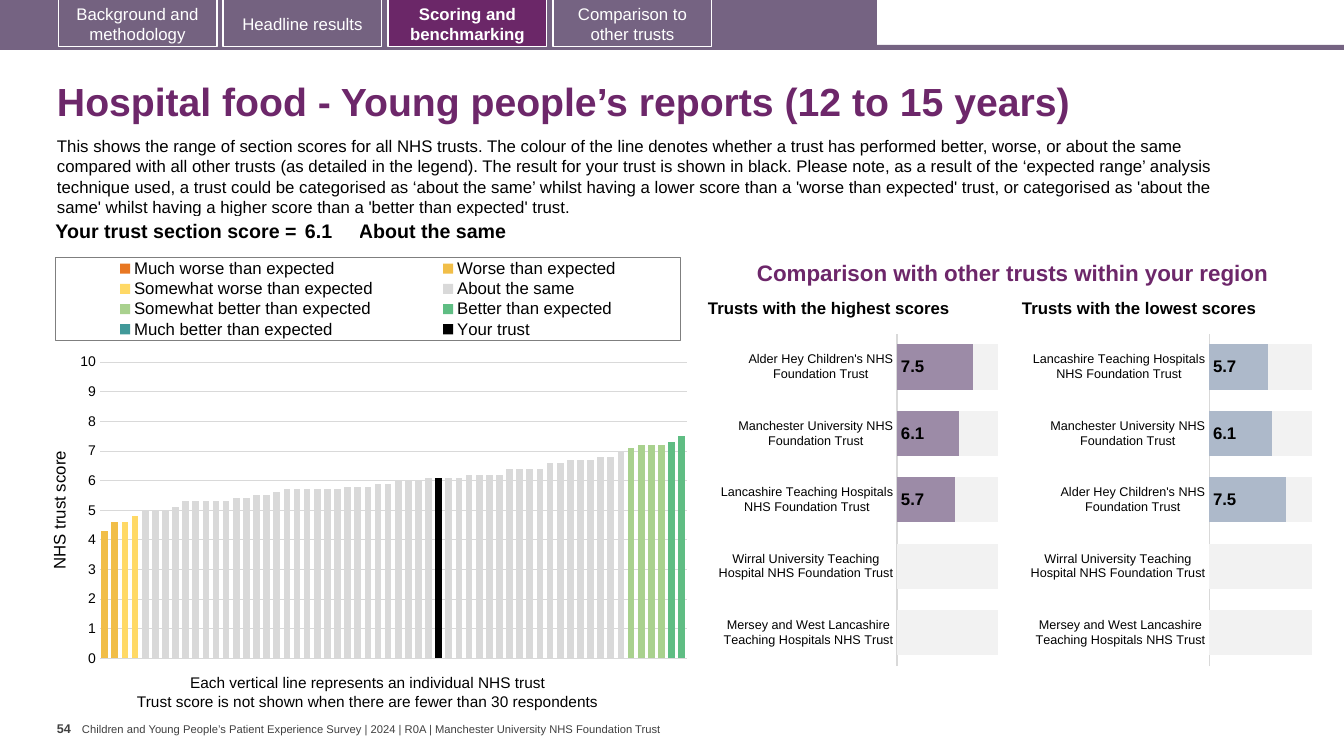
import copy

from lxml import etree
from pptx import Presentation
from pptx import util as u
from pptx.chart import data as chart_data
from pptx.dml import color
from pptx.enum import chart as ch, shapes, text
from pptx.oxml import ns

COLORS = {
    "plum": "6D276A", "tab": "746280", "active": "6B2768", "band": "756382",
    "white": "FFFFFF", "black": "000000", "grey": "404040", "grid": "D9D9D9",
    "frame": "7F7F7F", "rest": "F2F2F2", "highest": "9C8BA7", "lowest": "ADB9CA",
}
EMU_PER_PX = 914400 / 100.8
MIDDLE, BOTTOM, TOP = text.MSO_ANCHOR.MIDDLE, text.MSO_ANCHOR.BOTTOM, text.MSO_ANCHOR.TOP

BANDS = [(0, 45, 1344, 5), (0, 0, 877, 47)]
TABS = [("Background and methodology", "tab"), ("Headline results", "tab"),
        ("Scoring and benchmarking", "active"), ("Comparison to other trusts", "band")]
INTRO = (
    "This shows the range of section scores for all NHS trusts. The colour of the line denotes "
    "whether a trust has performed better, worse, or about the same compared with all other trusts "
    "(as detailed in the legend). The result for your trust is shown in black. Please note, as a "
    "result of the ‘expected range’ analysis technique used, a trust could be categorised as ‘about "
    "the same’ whilst having a lower score than a 'worse than expected' trust, or categorised as "
    "'about the same' whilst having a higher score than a 'better than expected' trust.")
FOOTER = ("Children and Young People’s Patient Experience Survey | 2024 | R0A | "
          "Manchester University NHS Foundation Trust")
PADDED, FLUSH = (10, 5), (0, 0)
LABELS = [
    (FOOTER, (82, 723, 589, 13), 8, "grey", False, MIDDLE, FLUSH, False, 1),
    ("Hospital food - Young people’s reports (12 to 15 years)", (47, 67, 1259, 73),
     28, "plum", True, MIDDLE, PADDED, True, 0.9),
    ("54", (57, 716, 25, 40), 9, "grey", True, TOP, (0, 5), True, 1),
    (INTRO, (47, 131, 1223, 92), 12, "black", False, TOP, PADDED, True, 1),
    ("Each vertical line represents an individual NHS trust", (180, 668, 378, 29),
     11, "black", False, TOP, PADDED, False, 1),
    ("Trust score is not shown when there are fewer than 30 respondents", (127, 687, 485, 29),
     11, "black", False, TOP, PADDED, False, 1),
    ("Comparison with other trusts within your region", (757, 235, 551, 51),
     16, "plum", True, BOTTOM, FLUSH, True, 0.9),
    ("Trusts with the highest scores", (708, 295, 288, 23), 12, "black", True, BOTTOM, FLUSH, True, 0.9),
    ("Trusts with the lowest scores", (1022, 295, 281, 23), 12, "black", True, BOTTOM, FLUSH, True, 0.9),
]
SUMMARY = [("Your trust section score =", 265, 4, text.PP_ALIGN.RIGHT),
           ("6.1", 58, 4, text.PP_ALIGN.LEFT), ("About the same", 856, 0, text.PP_ALIGN.LEFT)]

SCORES = [
    4.3, 4.6, 4.6, 4.8, 5, 5, 5, 5.1, 5.3, 5.3, 5.3, 5.3, 5.3, 5.4, 5.4, 5.5, 5.5, 5.6, 5.7, 5.7,
    5.7, 5.7, 5.7, 5.7, 5.8, 5.8, 5.8, 5.9, 5.9, 6, 6, 6, 6.1, 6.1, 6.1, 6.1, 6.2, 6.2, 6.2, 6.2,
    6.4, 6.4, 6.4, 6.4, 6.6, 6.6, 6.7, 6.7, 6.7, 6.8, 6.8, 7, 7.1, 7.2, 7.2, 7.2, 7.3, 7.5]
RATINGS = [
    ("Much worse than expected", "E87722", 0, 0), ("Worse than expected", "F1BE48", 0, 2),
    ("Somewhat worse than expected", "FFD966", 2, 4), ("About the same", "D9D9D9", 4, 52),
    ("Somewhat better than expected", "A9D18E", 52, 56), ("Better than expected", "5FBD83", 56, 58),
    ("Much better than expected", "419999", 0, 0), ("Your trust", "000000", 33, 34)]
REGION = [("Alder Hey Children's NHS Foundation Trust", 7.5),
          ("Manchester University NHS Foundation Trust", 6.1),
          ("Lancashire Teaching Hospitals NHS Foundation Trust", 5.7)]
UNSCORED = [("Wirral University Teaching Hospital NHS Foundation Trust", None),
            ("Mersey and West Lancashire Teaching Hospitals NHS Trust", None)]
RANKINGS = [("lowest", (1027, 327, 291, 346), REGION[::-1] + UNSCORED),
            ("highest", (715, 327, 289, 346), REGION + UNSCORED)]


def px(value):
    return u.Emu(round(value * EMU_PER_PX))


def box(bounds):
    return [px(value) for value in bounds]


def rgb(name):
    return color.RGBColor.from_string(COLORS.get(name, name))


def assign(target, values):
    for name, value in values.items():
        setattr(target, name, value)


def style(font, size, shade="black", bold=False, face="Arial"):
    assign(font, {"size": u.Pt(size), "bold": bold, "name": face})
    font.color.rgb = rgb(shade)


def paint(target, shade):
    target.fill.solid()
    target.fill.fore_color.rgb = rgb(shade)


def outline(line, shade):
    line.width = u.Pt(0.75)
    line.color.rgb = rgb(shade)


def add_rect(slide, bounds, shade):
    rect = slide.shapes.add_shape(shapes.MSO_SHAPE.RECTANGLE, *box(bounds))
    rect.shadow.inherit = False
    paint(rect, shade)
    rect.line.fill.background()
    return rect


def add_label(slide, wording, bounds, size, shade, bold, anchor, inset, wrap, spacing):
    frame = slide.shapes.add_textbox(*box(bounds)).text_frame
    side, end = map(px, inset)
    assign(frame, {"word_wrap": wrap, "vertical_anchor": anchor, "margin_left": side,
                   "margin_right": side, "margin_top": end, "margin_bottom": end})
    line = frame.paragraphs[0]
    line.text = wording
    line.line_spacing = spacing
    style(line.runs[0].font, size, shade, bold)


def add_tabs(slide):
    for i, (wording, shade) in enumerate(TABS):
        tab = add_rect(slide, (58 + 165 * i, 0, 159, 47), shade)
        outline(tab.line, "white")
        tab.text_frame.vertical_anchor = MIDDLE
        line = tab.text_frame.paragraphs[0]
        line.text = wording
        line.alignment = text.PP_ALIGN.CENTER
        style(line.runs[0].font, 12, "white", shade == "active")


def add_summary(slide):
    total = sum(part[1] for part in SUMMARY)
    table = slide.shapes.add_table(1, len(SUMMARY), *box((36, 217, total, 31))).table
    assign(table, {"first_row": False, "horz_banding": False})
    for i, (wording, width, side, align) in enumerate(SUMMARY):
        table.columns[i].width = px(width)
        cell = table.cell(0, i)
        cell.fill.background()
        assign(cell, {"margin_left": px(side), "margin_right": px(side),
                      "margin_top": px(4), "margin_bottom": px(4)})
        line = cell.text_frame.paragraphs[0]
        line.text = wording
        line.alignment = align
        style(line.runs[0].font, 14, bold=True)


def add_bars(slide, kind, bounds, categories, series, gap):
    values = chart_data.CategoryChartData(number_format="0.0")
    values.categories = categories
    for name, shade, scores in series:
        values.add_series(name, scores)
    chart = slide.shapes.add_chart(kind, *box(bounds), values).chart
    assign(chart, {"has_title": False, "has_legend": False})
    style(chart.font, 10, face="Calibri")
    plot = chart.plots[0]
    assign(plot, {"gap_width": gap, "overlap": 100, "vary_by_categories": False})
    for bars, (name, shade, scores) in zip(plot.series, series):
        paint(bars.format, shade)
        bars.invert_if_negative = False
    assign(chart.value_axis, {"minimum_scale": 0, "maximum_scale": 10})
    return chart


def place(parent, index, fractions, inner=False):
    for old in parent.findall(ns.qn("c:layout")):
        parent.remove(old)
    layout = etree.Element(ns.qn("c:layout"))
    manual = etree.SubElement(layout, ns.qn("c:manualLayout"))
    settings = [("layoutTarget", "inner")] if inner else []
    settings += [("xMode", "edge"), ("yMode", "edge"), *zip("xywh", fractions)]
    for tag, value in settings:
        etree.SubElement(manual, ns.qn("c:" + tag)).set("val", str(value))
    parent.insert(index, layout)


def move_last_to_right_axis(area):
    bars, category, value = [area.find(ns.qn("c:" + tag)) for tag in ("barChart", "catAx", "valAx")]
    right = [copy.deepcopy(part) for part in (bars, category, value)]
    bars.remove(bars.findall(ns.qn("c:ser"))[-1])
    for series in right[0].findall(ns.qn("c:ser"))[:-1]:
        right[0].remove(series)
    renamed = {category.find(ns.qn("c:axId")).get("val"): "50001",
               value.find(ns.qn("c:axId")).get("val"): "50002"}
    for part in right:
        for ref in part.iter(ns.qn("c:axId"), ns.qn("c:crossAx")):
            ref.set("val", renamed[ref.get("val")])
    for tag in ("majorGridlines", "title"):
        for extra in right[2].findall(ns.qn("c:" + tag)):
            right[2].remove(extra)
    for tag, setting in {"axPos": "r", "tickLblPos": "none", "crosses": "max"}.items():
        right[2].find(ns.qn("c:" + tag)).set("val", setting)
    bars.addnext(right[0])
    value.addnext(right[1])
    right[1].addnext(right[2])


def add_score_chart(slide):
    series = [(name, shade, [score if start <= i < stop else None for i, score in enumerate(SCORES)])
              for name, shade, start, stop in RATINGS]
    ranks = [str(i + 1) for i in range(len(SCORES))]
    chart = add_bars(slide, ch.XL_CHART_TYPE.COLUMN_CLUSTERED, (46, 249, 646, 424), ranks, series, 50)
    chart.category_axis.visible = False
    axis = chart.value_axis
    assign(axis, {"major_tick_mark": ch.XL_TICK_MARK.NONE, "major_unit": 1, "has_title": True,
                  "tick_label_position": ch.XL_TICK_LABEL_POSITION.NEXT_TO_AXIS})
    assign(axis.tick_labels, {"number_format": "0", "number_format_is_linked": False})
    style(axis.tick_labels.font, 10)
    axis.format.line.fill.background()
    outline(axis.major_gridlines.format.line, "grid")
    caption = axis.axis_title.text_frame
    caption.text = "NHS trust score"
    style(caption.paragraphs[0].runs[0].font, 12)
    chart.has_legend = True
    legend = chart.legend
    assign(legend, {"position": ch.XL_LEGEND_POSITION.TOP, "include_in_layout": False})
    style(legend.font, 12)
    legend_xml = chart.element.find(".//" + ns.qn("c:legend"))
    place(legend_xml, 1, (0.015, 0.02, 0.967, 0.196))
    frame = etree.Element(ns.qn("c:spPr"))
    edge = etree.SubElement(frame, ns.qn("a:ln"), w="9525")
    fill = etree.SubElement(edge, ns.qn("a:solidFill"))
    etree.SubElement(fill, ns.qn("a:srgbClr"), val=COLORS["frame"])
    legend_xml.find(ns.qn("c:txPr")).addprevious(frame)
    area = chart.element.find(".//" + ns.qn("c:plotArea"))
    place(area, 0, (0.083, 0.267, 0.909, 0.699), True)
    move_last_to_right_axis(area)


def add_ranking(slide, shade, bounds, trusts):
    names, scores = zip(*trusts)
    rest = [round(10 - (score or 0), 1) for score in scores]
    series = [("Series 1", shade, scores), ("Series 2", "rest", rest)]
    chart = add_bars(slide, ch.XL_CHART_TYPE.BAR_STACKED, bounds, names, series, 47)
    assign(chart.value_axis, {"visible": False, "has_major_gridlines": False})
    axis = chart.category_axis
    assign(axis, {"reverse_order": True, "major_tick_mark": ch.XL_TICK_MARK.NONE})
    style(axis.tick_labels.font, 9)
    outline(axis.format.line, "grid")
    labels = chart.plots[0].series[0].data_labels
    assign(labels, {"show_value": True, "position": ch.XL_LABEL_POSITION.INSIDE_BASE,
                    "number_format": "0.0", "number_format_is_linked": False})
    style(labels.font, 12, bold=True)


def main():
    deck = Presentation()
    assign(deck, {"slide_width": px(1344), "slide_height": px(756)})
    slide = deck.slides.add_slide(deck.slide_layouts[6])
    for bounds in BANDS:
        add_rect(slide, bounds, "band")
    add_tabs(slide)
    for label in LABELS:
        add_label(slide, *label)
    add_summary(slide)
    add_score_chart(slide)
    for ranking in RANKINGS:
        add_ranking(slide, *ranking)
    deck.save("out.pptx")


if __name__ == "__main__":
    main()
